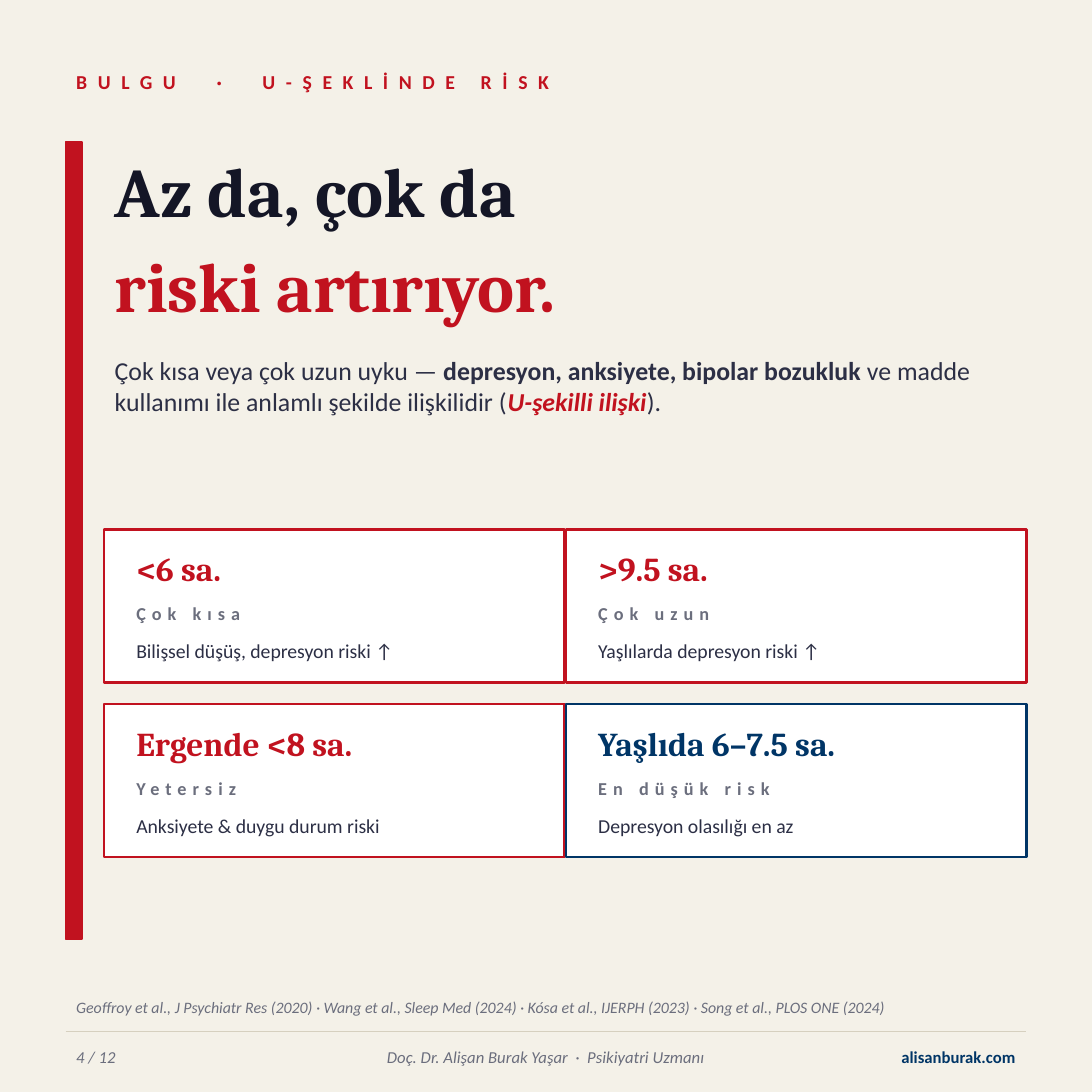
import pptx
import pptx.dml.color
import pptx.enum.shapes
import pptx.enum.text
import pptx.oxml.ns
import pptx.util
from lxml import etree

Pt = pptx.util.Pt
RGBColor = pptx.dml.color.RGBColor
Align = pptx.enum.text.PP_ALIGN
Anchor = pptx.enum.text.MSO_ANCHOR

CREAM = RGBColor(0xF4, 0xF1, 0xE8)
WHITE = RGBColor(0xFF, 0xFF, 0xFF)
RED = RGBColor(0xC1, 0x12, 0x1F)
NAVY = RGBColor(0x00, 0x35, 0x66)
INK = RGBColor(0x14, 0x16, 0x26)
SLATE = RGBColor(0x2C, 0x2F, 0x45)
GREY = RGBColor(0x6B, 0x6E, 0x7D)
SAND = RGBColor(0xD6, 0xD0, 0xBF)

SANS, SERIF = "Calibri", "Cambria"

EYEBROW = "BULGU  ·  U-ŞEKLİNDE RİSK"
HEADLINE = [("Az da, çok da", INK), ("riski artırıyor.", RED)]
SUMMARY = [
    ("Çok kısa veya çok uzun uyku — ", {}),
    ("depresyon, anksiyete, bipolar bozukluk ", {"bold": True}),
    ("ve madde kullanımı ile anlamlı şekilde ilişkilidir (", {}),
    ("U-şekilli ilişki", {"color": RED, "bold": True, "italic": True}),
    (").", {}),
]
CARDS = [
    ("<6 sa.", "Çok kısa", "Bilişsel düşüş, depresyon riski ↑", RED),
    (">9.5 sa.", "Çok uzun", "Yaşlılarda depresyon riski ↑", RED),
    ("Ergende <8 sa.", "Yetersiz", "Anksiyete & duygu durum riski", RED),
    ("Yaşlıda 6–7.5 sa.", "En düşük risk", "Depresyon olasılığı en az", NAVY),
]
SOURCES = ("Geoffroy et al., J Psychiatr Res (2020) · Wang et al., Sleep Med (2024) · "
           "Kósa et al., IJERPH (2023) · Song et al., PLOS ONE (2024)")
FOOTER = [  # text, left, width, format
    ("4 / 12", 43.2, 108, {"italic": True}),
    ("Doç. Dr. Alişan Burak Yaşar  ·  Psikiyatri Uzmanı", 158.4, 403.2,
     {"italic": True, "align": Align.CENTER}),
    ("alisanburak.com", 568.8, 108, {"color": NAVY, "bold": True, "align": Align.RIGHT}),
]

PAGE_SIZE = 720
MARGIN = 43.2
CONTENT_WIDTH = PAGE_SIZE - 2 * MARGIN
COLUMN_LEFT = 68.4
TOP = 93.6
CARDS_TOP = 349.2
CARD_WIDTH, CARD_HEIGHT = 303.84, 100.8
CARD_PITCH_X, CARD_PITCH_Y = 304.56, 115.2
CARD_PADDING, CARD_TEXT_WIDTH = 14.4, 280.8
FOOTER_LINE = 680.4


def add_span(para, text, font=SANS, size=12, color=SLATE, bold=False, italic=False, spacing=0):
    span = para.add_run()
    span.text = text
    span.font.name = font
    span.font.size = Pt(size)
    span.font.color.rgb = color
    span.font.bold = bold
    span.font.italic = italic
    if spacing:
        span.font._element.set("spc", str(spacing * 100))


def set_frame(box, anchor):
    frame = box.text_frame
    frame.word_wrap = True
    frame.auto_size = pptx.enum.text.MSO_AUTO_SIZE.NONE
    frame.vertical_anchor = anchor
    return frame


def add_text(page, text, left, top, width, height, anchor=Anchor.TOP, align=Align.LEFT, **style):
    box = page.shapes.add_textbox(Pt(left), Pt(top), Pt(width), Pt(height))
    para = set_frame(box, anchor).paragraphs[0]
    para.alignment = align
    add_span(para, text, **style)


def add_rectangle(page, left, top, width, height, fill, line, line_width):
    box = page.shapes.add_shape(pptx.enum.shapes.MSO_SHAPE.RECTANGLE,
                                Pt(left), Pt(top), Pt(width), Pt(height))
    box.shadow.inherit = False
    box.fill.solid()
    box.fill.fore_color.rgb = fill
    box.line.color.rgb = line
    box.line.width = Pt(line_width)


def place(box, left, top, width, height):
    box.left, box.top, box.width, box.height = Pt(left), Pt(top), Pt(width), Pt(height)


def fill_headline(box):
    place(box, COLUMN_LEFT, TOP, 612, 126)
    frame = set_frame(box, Anchor.MIDDLE)
    for index, (text, color) in enumerate(HEADLINE):
        para = frame.add_paragraph() if index else frame.paragraphs[0]
        para.alignment = Align.LEFT
        para.space_before = Pt(7.3 if index else 0)
        add_span(para, text, font=SERIF, size=46, color=color, bold=True)


def fill_summary(box):
    place(box, COLUMN_LEFT, 230.4, 608.4, 100.8)
    para = set_frame(box, Anchor.TOP).paragraphs[0]
    para.space_before = Pt(0)
    properties = para._p.get_or_add_pPr()
    properties.set("marL", "0")
    properties.set("indent", "0")
    etree.SubElement(properties, pptx.oxml.ns.qn("a:buNone"))
    for text, style in SUMMARY:
        add_span(para, text, size=17, **style)


def add_card(page, index, value, label, note, color):
    row, column = divmod(index, 2)
    left = COLUMN_LEFT + column * CARD_PITCH_X
    top = CARDS_TOP + row * CARD_PITCH_Y
    add_rectangle(page, left, top, CARD_WIDTH, CARD_HEIGHT, WHITE, color, 1.5)
    lines = [
        (value, 8.64, 39.6, {"font": SERIF, "size": 22, "color": color, "bold": True}),
        (label, 44.64, 23.04, {"size": 12, "color": GREY, "bold": True, "spacing": 4}),
        (note, 68.4, 28.8, {"size": 13}),
    ]
    for text, offset, height, style in lines:
        add_text(page, text, left + CARD_PADDING, top + offset, CARD_TEXT_WIDTH, height, **style)


def add_footer(page):
    add_text(page, SOURCES, MARGIN, 651.6, CONTENT_WIDTH, 25.2, anchor=Anchor.MIDDLE,
             size=10.5, color=GREY, italic=True)
    rule = page.shapes.add_connector(pptx.enum.shapes.MSO_CONNECTOR.STRAIGHT, Pt(MARGIN),
                                     Pt(FOOTER_LINE), Pt(PAGE_SIZE - MARGIN), Pt(FOOTER_LINE))
    rule.line.color.rgb = SAND
    rule.line.width = Pt(0.75)
    etree.SubElement(rule._element.spPr, pptx.oxml.ns.qn("a:effectLst"))
    for text, left, width, style in FOOTER:
        add_text(page, text, left, FOOTER_LINE + 3.6, width, 25.2, anchor=Anchor.MIDDLE,
                 **{"size": 11, "color": GREY, **style})


def main():
    deck = pptx.Presentation()
    deck.slide_width = deck.slide_height = Pt(PAGE_SIZE)
    page = deck.slides.add_slide(deck.slide_layouts[1])
    page.background.fill.solid()
    page.background.fill.fore_color.rgb = CREAM

    fill_headline(page.shapes.title)
    fill_summary(page.placeholders[1])
    add_text(page, EYEBROW, MARGIN, 39.6, CONTENT_WIDTH, 28.8, anchor=Anchor.MIDDLE,
             size=13, color=RED, bold=True, spacing=7)
    add_rectangle(page, MARGIN, TOP, 10.8, 525.6, RED, RED, 1)
    for index, card in enumerate(CARDS):
        add_card(page, index, *card)
    add_footer(page)
    deck.save("out.pptx")


if __name__ == "__main__":
    main()
